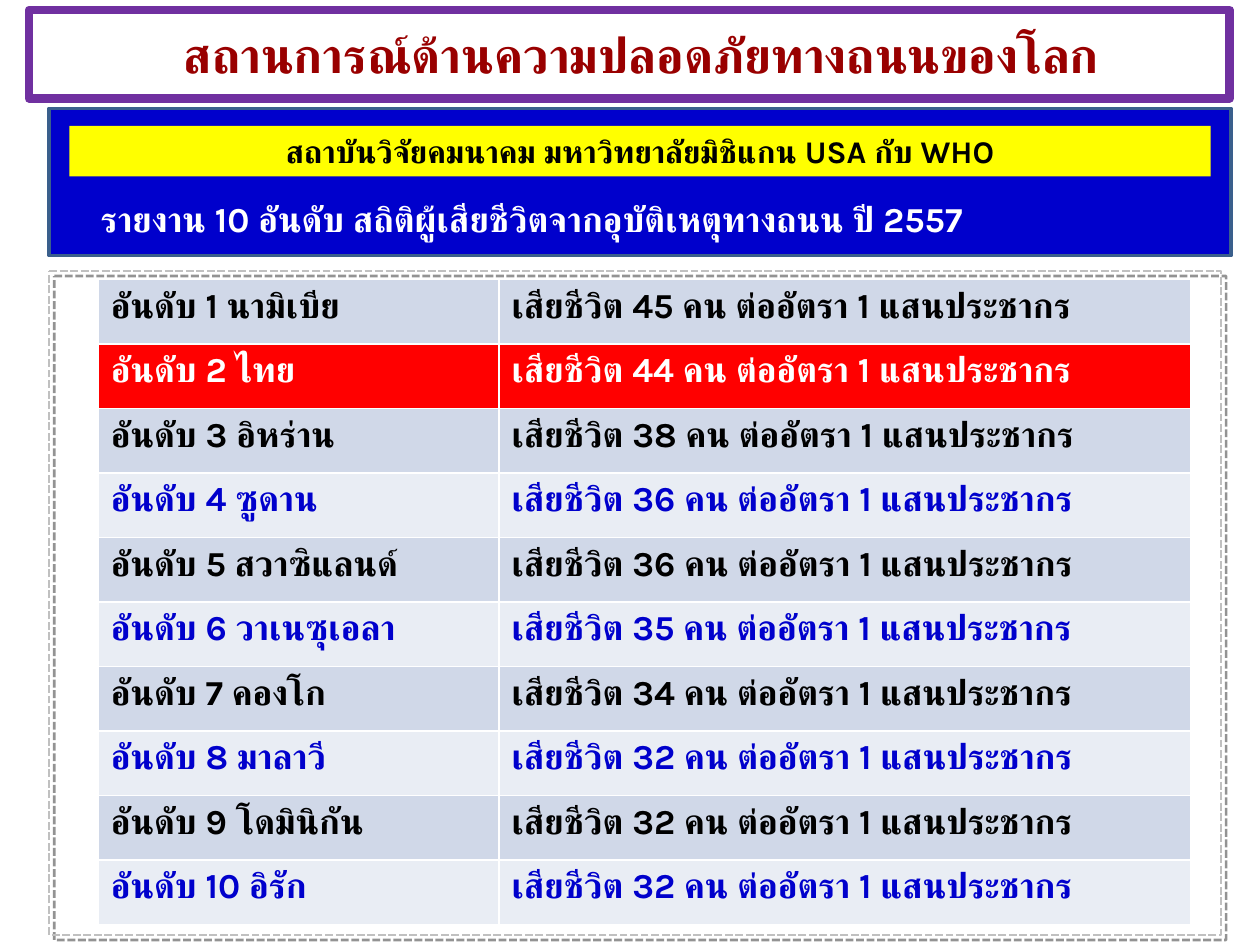
"""Build the slide ranking countries by road deaths."""
from dataclasses import dataclass

from lxml import etree
from pptx import Presentation
from pptx.dml.color import RGBColor
from pptx.enum.dml import MSO_LINE
from pptx.enum.shapes import MSO_SHAPE
from pptx.enum.text import MSO_ANCHOR, PP_ALIGN
from pptx.oxml.ns import qn
from pptx.util import Inches, Pt

RECTANGLE, ROUNDED = MSO_SHAPE.RECTANGLE, MSO_SHAPE.ROUNDED_RECTANGLE
LEFT, CENTER = PP_ALIGN.LEFT, PP_ALIGN.CENTER
MIDDLE = MSO_ANCHOR.MIDDLE
SHORT_DASH = MSO_LINE.SQUARE_DOT
FONT = "Karla"
BLACK, WHITE, BLUE = "000000", "FFFFFF", "0000CC"


@dataclass(frozen=True)
class Ranking:
    country: str
    deaths: int


@dataclass(frozen=True)
class RowStyle:
    fill: str
    text: str


@dataclass(frozen=True)
class Panel:
    box: tuple[float, float, float, float]
    fill: str | None = None
    line: str | None = None
    width: float = 0
    outline: int = RECTANGLE


RANKINGS = [
    Ranking("นามิเบีย", 45),
    Ranking("ไทย", 44),
    Ranking("อิหร่าน", 38),
    Ranking("ซูดาน", 36),
    Ranking("สวาซิแลนด์", 36),
    Ranking("วาเนซุเอลา", 35),
    Ranking("คองโก", 34),
    Ranking("มาลาวี", 32),
    Ranking("โดมินิกัน", 32),
    Ranking("อิรัก", 32),
]
BANDS = [RowStyle("D0D8E8", BLACK), RowStyle("E9EDF4", BLUE)]
HIGHLIGHT = RowStyle("FF0000", WHITE)
HIGHLIGHTED_COUNTRY = "ไทย"

HEADER = Panel((0.39, 0.86, 9.38, 1.17), BLUE, "3A5F8C", 2)
TABLE_FRAME = Panel((0.39, 2.15, 9.3, 5.27), None, "C0C0C0", 1.5, ROUNDED)
SOURCE_BAND = Panel((0.55, 1, 9.06, 0.4), "FFFF00")


def color(value: str) -> RGBColor:
    return RGBColor.from_string(value)


def inches(box: tuple) -> list:
    return [Inches(length) for length in box]


def apply(target, values: dict) -> None:
    for name, value in values.items():
        setattr(target, name, value)


def paint(item, fill: str | None) -> None:
    if fill is None:
        item.fill.background()
    else:
        item.fill.solid()
        item.fill.fore_color.rgb = color(fill)


def outline(shape, line: str | None, width: float) -> None:
    if line is None:
        shape.line.fill.background()
    else:
        shape.line.color.rgb = color(line)
        shape.line.width = Pt(width)


def write(frame, text: str, size: float, text_color: str, align=LEFT) -> None:
    paragraph = frame.paragraphs[0]
    paragraph.alignment = align
    run = paragraph.add_run()
    run.text = text
    apply(run.font, {"name": FONT, "size": Pt(size), "bold": True})
    run.font.color.rgb = color(text_color)
    latin = run.font._element.find(qn("a:latin"))
    thai = etree.Element(qn("a:cs"), typeface=FONT)
    latin.addnext(thai)


def draw_panel(slide, panel: Panel):
    shape = slide.shapes.add_shape(panel.outline, *inches(panel.box))
    paint(shape, panel.fill)
    outline(shape, panel.line, panel.width)
    shape.shadow.inherit = False
    return shape


def draw_title(slide) -> None:
    title = slide.shapes.title
    places = zip(("left", "top", "width", "height"), inches((0.23, 0.08, 9.53, 0.7)))
    apply(title, dict(places))
    paint(title, WHITE)
    outline(title, "7030A0", 5)
    frame = title.text_frame
    apply(frame, {"vertical_anchor": MIDDLE, "word_wrap": True,
                  "margin_left": Inches(0.29), "margin_right": Inches(0.1)})
    write(frame, "สถานการณ์ด้านความปลอดภัยทางถนนของโลก", 28, "990000", CENTER)


def draw_table_frame(slide) -> None:
    frame = draw_panel(slide, TABLE_FRAME)
    frame.adjustments[0] = 0
    frame.line.dash_style = SHORT_DASH
    effects = frame._element.spPr.find(qn("a:effectLst"))
    shadow = etree.SubElement(effects, qn("a:outerShdw"), blurRad="0",
                              dist=str(Pt(4.2)), dir="2700000",
                              algn="ctr", rotWithShape="0")
    tint = etree.SubElement(shadow, qn("a:srgbClr"), val="292929")
    etree.SubElement(tint, qn("a:alpha"), val="50000")


def draw_rankings(slide) -> None:
    graphic = slide.shapes.add_table(len(RANKINGS), 2, *inches((0.78, 2.22, 8.67, 5.12)))
    table = graphic.table
    apply(table, {"first_row": False, "horz_banding": False})
    for column, width in zip(table.columns, (3.18, 5.49)):
        column.width = Inches(width)
    for index, ranking in enumerate(RANKINGS):
        highlighted = ranking.country == HIGHLIGHTED_COUNTRY
        style = HIGHLIGHT if highlighted else BANDS[index % 2]
        texts = (f"อันดับ {index + 1} {ranking.country}",
                 f"เสียชีวิต {ranking.deaths} คน ต่ออัตรา 1 แสนประชากร")
        for cell, text in zip(table.rows[index].cells, texts):
            paint(cell, style.fill)
            write(cell.text_frame, text, 20, style.text)


def draw_header_text(slide) -> None:
    band = draw_panel(slide, SOURCE_BAND).text_frame
    apply(band, {"word_wrap": True, "vertical_anchor": MIDDLE})
    write(band, "สถาบันวิจัยคมนาคม มหาวิทยาลัยมิชิแกน USA กับ WHO", 18, BLACK, CENTER)
    report = slide.shapes.add_textbox(*inches((0.7, 1.52, 8.59, 0.44))).text_frame
    report.word_wrap = True
    write(report, "รายงาน 10 อันดับ สถิติผู้เสียชีวิตจากอุบัติเหตุทางถนน ปี 2557", 20, WHITE)


def main() -> None:
    presentation = Presentation()
    apply(presentation, {"slide_width": Inches(10), "slide_height": Inches(7.5)})
    slide = presentation.slides.add_slide(presentation.slide_layouts[5])
    draw_title(slide)
    draw_panel(slide, HEADER)
    draw_table_frame(slide)
    draw_rankings(slide)
    draw_header_text(slide)
    presentation.save("out.pptx")


if __name__ == "__main__":
    main()
